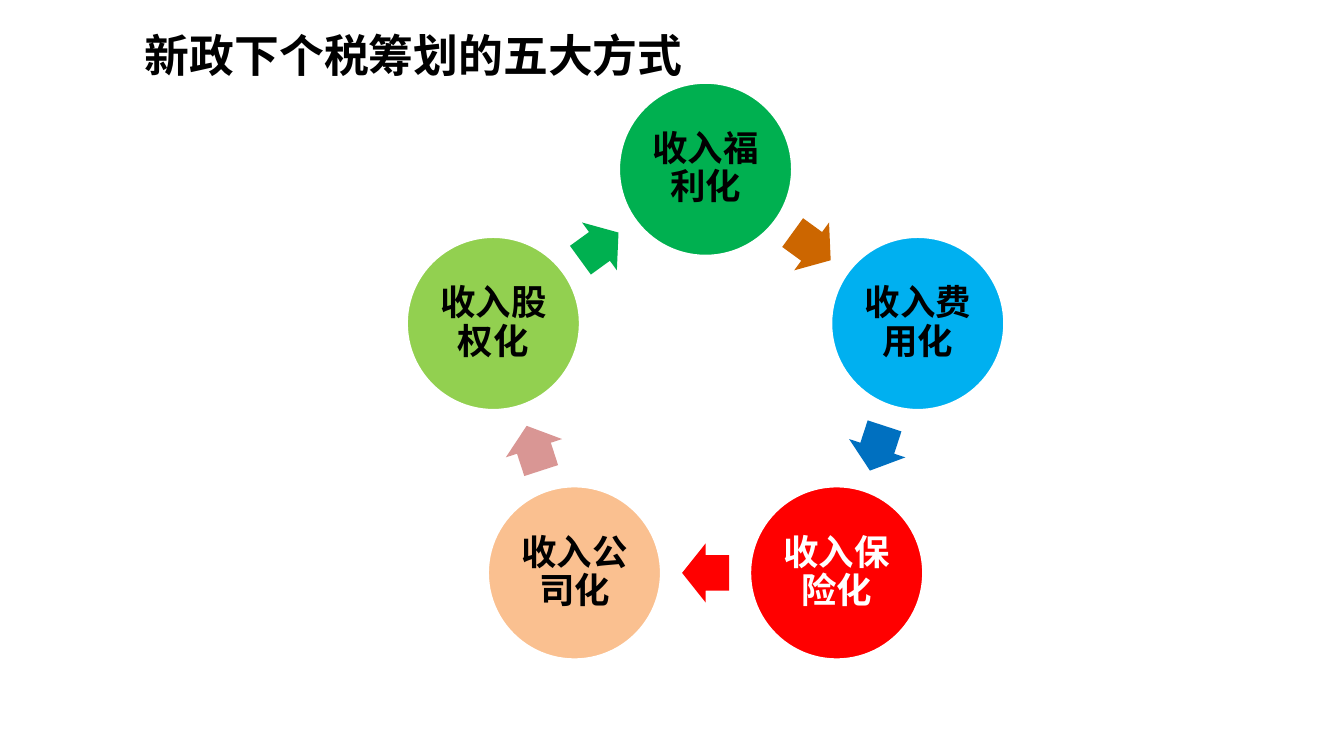
from math import cos, radians, sin

from pptx import Presentation
from pptx.dml.color import RGBColor
from pptx.enum.shapes import MSO_SHAPE
from pptx.enum.text import MSO_ANCHOR, PP_ALIGN
from pptx.util import Inches, Pt

OVAL, ARROW = MSO_SHAPE.OVAL, MSO_SHAPE.RIGHT_ARROW
MIDDLE = MSO_ANCHOR.MIDDLE
LEFT, CENTER = PP_ALIGN.LEFT, PP_ALIGN.CENTER

# Content: label, circle fill, text colour, fill of the arrow to the next circle
TITLE = "新政下个税筹划的五大方式"
STEPS = [
    ("收入福利化", "00B050", "000000", "CC6600"),
    ("收入费用化", "00B0F0", "000000", "0070C0"),
    ("收入保险化", "FF0000", "FFFFFF", "FF0000"),
    ("收入公司化", "FAC090", "000000", "D99694"),
    ("收入股权化", "92D050", "000000", "00B050"),
]
THEME = {"font": "Arial", "text": "000000", "outline": "FFFFFF",
         "title_size": 24, "label_size": 19, "outline_width": 2}

# Layout in inches, on a 16:9 slide
W = 10
H = W * 9 / 16
CX, CY, RADIUS = 5.25, 2.92, 1.66
CIRCLE = 1.3
ARROW_W, ARROW_H = 0.35, 0.44
TURN = 360 / len(STEPS)


def ring_point(i):
    """Centre of circle i, clockwise from the top."""
    a = radians(i * TURN - 90)
    return CX + RADIUS * cos(a), CY + RADIUS * sin(a)


def write(shape, text, size, color, align, margin, spacing):
    tf = shape.text_frame
    frame = {"word_wrap": True, "vertical_anchor": MIDDLE}
    for side in ("left", "right", "top", "bottom"):
        frame["margin_" + side] = Inches(margin)
    for name, value in frame.items():
        setattr(tf, name, value)
    p = tf.paragraphs[0]
    p.alignment, p.line_spacing = align, spacing
    r = p.add_run()
    r.text = text
    for name, value in {"name": THEME["font"], "size": Pt(size), "bold": True}.items():
        setattr(r.font, name, value)
    r.font.color.rgb = RGBColor.from_string(color)


def add_centered(s, kind, x, y, w, h, fill):
    sp = s.shapes.add_shape(kind, Inches(x - w / 2), Inches(y - h / 2), Inches(w), Inches(h))
    sp.shadow.inherit = False
    sp.fill.solid()
    sp.fill.fore_color.rgb = RGBColor.from_string(fill)
    sp.line.fill.background()
    return sp


def main():
    prs = Presentation()
    prs.slide_width, prs.slide_height = Inches(W), Inches(H)
    s = prs.slides.add_slide(prs.slide_layouts[6])

    # Title
    box = s.shapes.add_textbox(Inches(0.98), Inches(0.21), Inches(5.74), Inches(0.39))
    write(box, TITLE, THEME["title_size"], THEME["text"], LEFT, 0.1, 1.0)

    # Cycle: each circle is followed by an arrow halfway to the next one
    for i, (label, fill, color, arrow_fill) in enumerate(STEPS):
        x, y = ring_point(i)
        circle = add_centered(s, OVAL, x, y, CIRCLE, CIRCLE, fill)
        circle.line.color.rgb = RGBColor.from_string(THEME["outline"])
        circle.line.width = Pt(THEME["outline_width"])
        write(circle, label, THEME["label_size"], color, CENTER, 0.03, 0.9)

        nx, ny = ring_point(i + 1)
        arrow = add_centered(s, ARROW, (x + nx) / 2, (y + ny) / 2, ARROW_W, ARROW_H, arrow_fill)
        arrow.adjustments[0], arrow.adjustments[1] = 0.6, 0.5
        arrow.rotation = (i + 0.5) * TURN

    prs.save("out.pptx")


if __name__ == "__main__":
    main()
